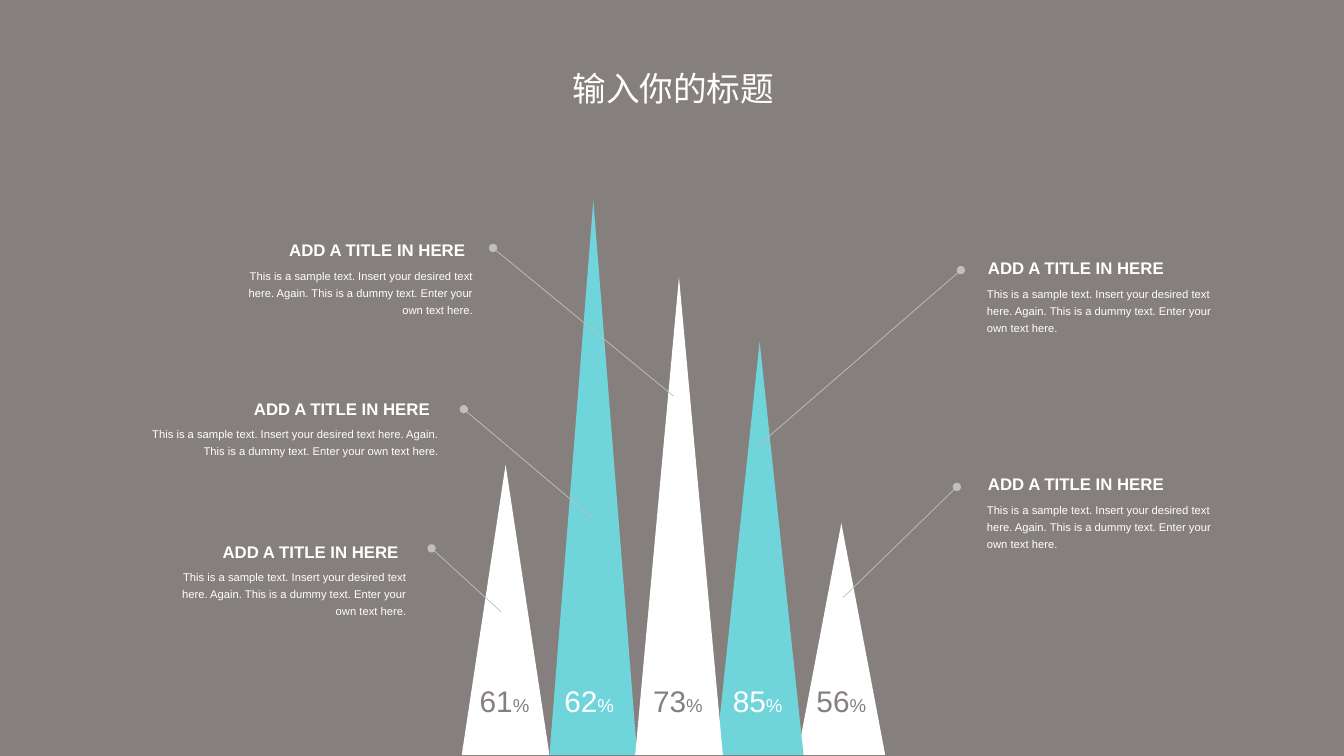
from lxml import etree
from pptx import Presentation
from pptx.dml.color import RGBColor
from pptx.enum.shapes import MSO_CONNECTOR, MSO_SHAPE
from pptx.enum.text import MSO_AUTO_SIZE, PP_ALIGN
from pptx.oxml.ns import qn
from pptx.util import Inches, Pt

TAUPE = RGBColor(0x85, 0x80, 0x7D)
WHITE = RGBColor(0xFF, 0xFF, 0xFF)
TEAL = RGBColor(0x6F, 0xD5, 0xDA)
SILVER = RGBColor(0xBF, 0xBF, 0xBF)
LATIN, CHINESE = "Arial", "Noto Sans CJK SC"

HEADING = "输入你的标题"
NOTE_TITLE = "ADD A TITLE IN HERE"
NOTE_BODY = ("This is a sample text. Insert your desired text here. Again. "
             "This is a dummy text. Enter your own text here.")

# Back to front: left edge, tip height, fill, label left edge, value, label colour
PEAKS = [
    (7.91, 5.19, WHITE, 8.00, "56", TAUPE),
    (4.58, 4.61, WHITE, 4.66, "61", TAUPE),
    (5.45, 1.99, TEAL, 5.50, "62", WHITE),
    (7.10, 3.39, TEAL, 7.17, "85", WHITE),
    (6.30, 2.75, WHITE, 6.38, "73", TAUPE),
]
PEAK_WIDTH, PEAK_BASE = 0.87, 7.49

# Title left, top and width; body left, width and height; alignment
NOTES = [
    (9.70, 2.49, 2.12, 9.69, 2.47, 0.61, PP_ALIGN.LEFT),
    (9.70, 4.63, 2.12, 9.69, 2.47, 0.61, PP_ALIGN.LEFT),
    (2.77, 2.31, 2.12, 2.32, 2.47, 0.61, PP_ALIGN.RIGHT),
    (2.42, 3.88, 2.12, 1.37, 3.08, 0.44, PP_ALIGN.RIGHT),
    (2.11, 5.30, 2.04, 1.66, 2.47, 0.61, PP_ALIGN.RIGHT),
]
BODY_DROP = 0.28

# From the peak to the dot beside the note
LEADERS = [
    (8.36, 5.93, 9.49, 4.83),
    (7.51, 4.43, 9.53, 2.68),
    (6.68, 3.93, 4.89, 2.46),
    (5.88, 5.14, 4.60, 4.06),
    (4.97, 6.07, 4.28, 5.44),
]


def add_text(page, place, spans, wrap=True, **para_format):
    """Add one paragraph; each span is its text and a dict of font values."""
    box = page.shapes.add_textbox(*map(Inches, place))
    box.text_frame.word_wrap = wrap
    box.text_frame.auto_size = MSO_AUTO_SIZE.SHAPE_TO_FIT_TEXT
    para = box.text_frame.paragraphs[0]
    for name, value in para_format.items():
        setattr(para, name, value)
    for text, (color, font_format) in spans:
        span = para.add_run()
        span.text = text
        span.font.color.rgb = color
        for name, value in font_format.items():
            setattr(span.font, name, value)
    return para


def add_background(page, width, height):
    panel = page.shapes.add_shape(MSO_SHAPE.RECTANGLE, 0, 0, width, height)
    panel.shadow.inherit = False
    panel.fill.solid()
    panel.fill.fore_color.rgb = TAUPE
    panel.line.color.rgb = TAUPE
    panel.line.width = Pt(1)


def add_heading(page):
    style = (WHITE, {"size": Pt(24), "name": CHINESE})
    para = add_text(page, (5.58, 0.62, 2.64, 0.5), [(HEADING, style)])
    props = para.runs[0].font._element
    etree.SubElement(props, qn("a:ea"), typeface=CHINESE)


def add_peak(page, left, tip, color):
    right, middle = left + PEAK_WIDTH, left + PEAK_WIDTH / 2
    outline = page.shapes.build_freeform(Inches(right), Inches(PEAK_BASE))
    outline.add_line_segments([(Inches(left), Inches(PEAK_BASE)),
                               (Inches(middle), Inches(tip))], close=True)
    peak = outline.convert_to_shape()
    peak.shadow.inherit = False
    peak.fill.solid()
    peak.fill.fore_color.rgb = color
    peak.line.fill.background()


def add_value(page, left, value, color):
    spans = [(text, (color, {"size": Pt(size), "name": LATIN}))
             for text, size in ((value, 21.3), ("%", 13.3))]
    add_text(page, (left, 6.72, 0.7, 0.46), spans, wrap=False)


def add_leader(page, ends):
    leader = page.shapes.add_connector(MSO_CONNECTOR.STRAIGHT, *map(Inches, ends))
    leader.line.color.rgb = SILVER
    leader.line.width = Pt(0.5)
    etree.SubElement(leader.line._get_or_add_ln(), qn("a:tailEnd"), type="oval")
    etree.SubElement(leader._element.spPr, qn("a:effectLst"))


def add_note(page, left, top, width, body_left, body_width, body_height, align):
    body = (WHITE, {"size": Pt(8), "name": LATIN})
    title = (WHITE, {"size": Pt(12), "name": LATIN, "bold": True})
    add_text(page, (body_left, top + BODY_DROP, body_width, body_height),
             [(NOTE_BODY, body)], line_spacing=Pt(12), alignment=align)
    add_text(page, (left, top, width, 0.33),
             [(NOTE_TITLE, title)], line_spacing=Pt(16))


def main():
    deck = Presentation()
    deck.slide_width, deck.slide_height = Inches(13.33), Inches(7.5)
    page = deck.slides.add_slide(deck.slide_layouts[6])
    add_background(page, deck.slide_width, deck.slide_height)
    add_heading(page)
    for left, tip, fill, *_ in PEAKS:
        add_peak(page, left, tip, fill)
    for *_, label_left, value, color in PEAKS:
        add_value(page, label_left, value, color)
    for ends in LEADERS:
        add_leader(page, ends)
    for note in NOTES:
        add_note(page, *note)
    deck.save("out.pptx")


if __name__ == "__main__":
    main()
